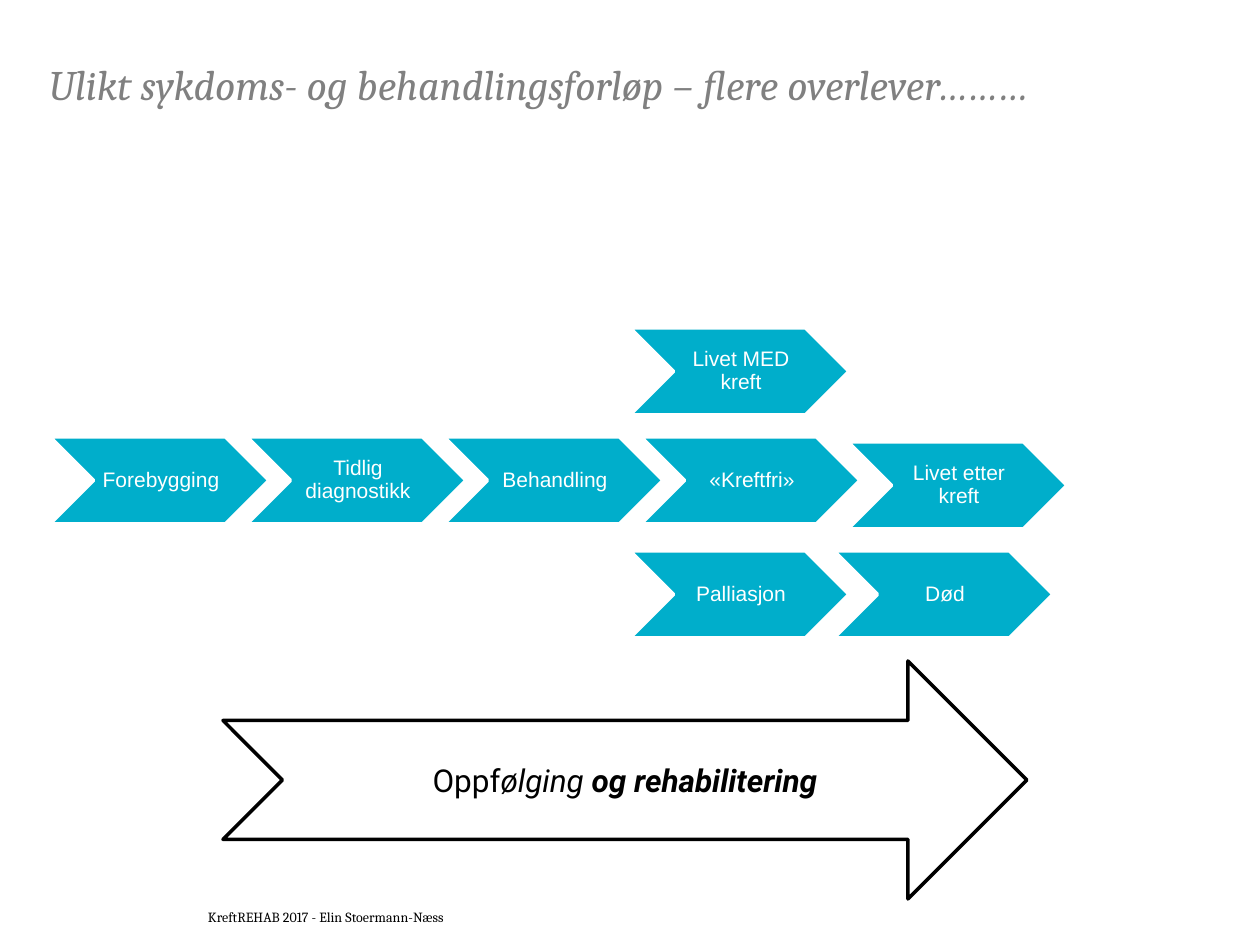
from pptx import Presentation
from pptx.dml.color import RGBColor
from pptx.enum.shapes import MSO_SHAPE as Shape
from pptx.enum.text import MSO_ANCHOR as Anchor, PP_ALIGN as Align
from pptx.util import Emu, Pt

# Content
TITLE = "Ulikt sykdoms- og behandlingsforløp – flere overlever………"
FOOTER = "KreftREHAB 2017 - Elin Stoermann-Næss"
MAIN_STEPS = ["Forebygging", "Tidlig diagnostikk", "Behandling", "«Kreftfri»"]
BRANCH_STEPS = [  # left, top, label
    (630, 328, "Livet MED kreft"),
    (630, 551, "Palliasjon"),
    (834, 551, "Død"),
    (848, 442, "Livet etter kreft"),
]
FOLLOW_UP = [  # text, italic, bold
    ("Oppf", False, False),
    ("ølging", True, False),
    (" og rehabilitering", True, True),
]

TURQUOISE = RGBColor(0x00, 0xAE, 0xCB)
WHITE = RGBColor(0xFF, 0xFF, 0xFF)
BLACK = RGBColor(0x00, 0x00, 0x00)
GREY = RGBColor(0x80, 0x80, 0x80)

# Layout in px, 126 to the inch
MAIN_LEFT, MAIN_TOP, MAIN_STEP = 50, 437, 197
CHEVRON_WIDTH, CHEVRON_HEIGHT = 219, 87
LABEL_INSET = CHEVRON_HEIGHT // 2
LABEL_MARGINS = (6, 3, 3, 3)


def px(value):
    return Emu(round(value * 914400 / 126))


def style(run, font_name, size, color, italic=False, bold=False):
    font = run.font
    font.name, font.size = font_name, Pt(size)
    font.italic, font.bold = italic, bold
    font.color.rgb = color


def add_text(slide, box, text, font_name, size, color, italic=False,
             anchor=Anchor.TOP, margins=(0, 0, 0, 0)):
    frame = slide.shapes.add_textbox(*map(px, box)).text_frame
    frame.word_wrap = True
    frame.vertical_anchor = anchor
    (frame.margin_left, frame.margin_top,
     frame.margin_right, frame.margin_bottom) = map(px, margins)
    frame.text = text
    paragraph = frame.paragraphs[0]
    style(paragraph.runs[0], font_name, size, color, italic)
    return paragraph


def add_arrow(slide, kind, box, fill, line):
    shape = slide.shapes.add_shape(kind, *map(px, box))
    shape.shadow.inherit = False
    shape.fill.solid()
    shape.fill.fore_color.rgb = fill
    shape.line.color.rgb = line
    shape.line.width = Pt(2)
    return shape


def add_step(slide, left, top, label):
    add_arrow(slide, Shape.CHEVRON, (left, top, CHEVRON_WIDTH, CHEVRON_HEIGHT),
              TURQUOISE, WHITE)
    box = (left + LABEL_INSET, top, CHEVRON_WIDTH - 2 * LABEL_INSET, CHEVRON_HEIGHT)
    paragraph = add_text(slide, box, label, "Arial", 12, WHITE,
                         anchor=Anchor.MIDDLE, margins=LABEL_MARGINS)
    paragraph.alignment = Align.CENTER
    paragraph.line_spacing = 0.9


def main():
    presentation = Presentation()
    presentation.slide_width, presentation.slide_height = px(1260), px(945)
    slide = presentation.slides.add_slide(presentation.slide_layouts[6])

    # Title
    add_text(slide, (49, 59, 1160, 62), TITLE, "Cambria", 24, GREY, italic=True)

    # Course of illness
    main_row = [(MAIN_LEFT + index * MAIN_STEP, MAIN_TOP, label)
                for index, label in enumerate(MAIN_STEPS)]
    for left, top, label in main_row + BRANCH_STEPS:
        add_step(slide, left, top, label)

    # Follow-up arrow
    arrow = add_arrow(slide, Shape.NOTCHED_RIGHT_ARROW, (223, 661, 804, 238),
                      WHITE, BLACK)
    arrow.text_frame.vertical_anchor = Anchor.MIDDLE
    paragraph = arrow.text_frame.paragraphs[0]
    paragraph.alignment = Align.CENTER
    for text, italic, bold in FOLLOW_UP:
        run = paragraph.add_run()
        run.text = text
        style(run, "Roboto", 18, BLACK, italic, bold)

    # Footer
    add_text(slide, (208, 887, 950, 59), FOOTER, "Cambria", 8, BLACK,
             anchor=Anchor.MIDDLE)

    presentation.save("out.pptx")


if __name__ == "__main__":
    main()
